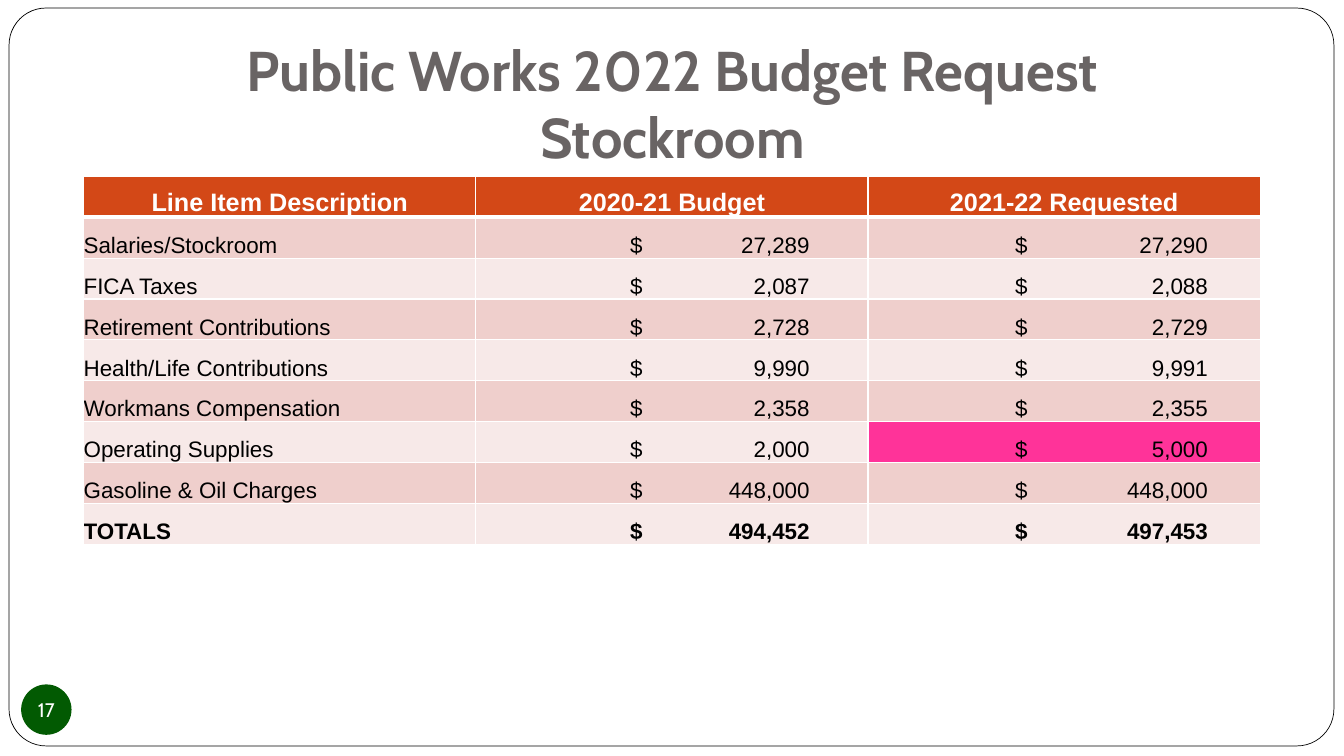
from lxml.etree import SubElement
from pptx import Presentation
from pptx.dml.color import RGBColor
from pptx.enum.shapes import MSO_SHAPE as SHAPE
from pptx.enum.text import MSO_ANCHOR as ANCHOR, PP_ALIGN as ALIGN
from pptx.oxml.ns import qn
from pptx.util import Inches, Pt

HEADERS = ["Line Item Description", "2020-21 Budget", "2021-22 Requested"]
ITEMS = [
    ("Salaries/Stockroom", "27,289", "27,290"),
    ("FICA Taxes", "2,087", "2,088"),
    ("Retirement Contributions", "2,728", "2,729"),
    ("Health/Life Contributions", "9,990", "9,991"),
    ("Workmans Compensation", "2,358", "2,355"),
    ("Operating Supplies", "2,000", "5,000"),
    ("Gasoline & Oil Charges", "448,000", "448,000"),
    ("TOTALS", "494,452", "497,453"),
]
# Tab stops of the dollar sign and of the right edge of the amount
AMOUNT_TABS = {1: (1.53, 3.31), 2: (1.46, 3.37)}
HIGHLIGHT = (6, 2)


def rgb(color):
    return RGBColor.from_string(color)


def write(tf, text, font="Arial", size=16, color="000000", bold=False,
          align=ALIGN.LEFT, anchor=ANCHOR.BOTTOM, insets=(0, 0, 0, 0), tabs=None):
    """Fill a text frame with one paragraph; a line feed becomes a line break."""
    tf.vertical_anchor = anchor
    tf.margin_left, tf.margin_top, tf.margin_right, tf.margin_bottom = map(Inches, insets)
    p = tf.paragraphs[0]
    p.alignment = align
    if tabs:
        tab_list = SubElement(p._p.get_or_add_pPr(), qn("a:tabLst"))
        for pos, side in zip(tabs, ("l", "r")):
            SubElement(tab_list, qn("a:tab"), pos=str(Inches(pos)), algn=side)
    for i, line in enumerate(text.split("\n")):
        if i:
            p.add_line_break()
        r = p.add_run()
        r.text = line
        r.font.name, r.font.size, r.font.bold = font, Pt(size), bold
        r.font.color.rgb = rgb(color)


class BudgetSlide:
    title_font = "Cabin"
    white, grey, green = "FFFFFF", "696464", "025A02"
    header_fill, highlight_fill = "D34817", "FF3399"
    bands = ("F7E9E8", "EFCFCC")

    def __init__(self, prs):
        self.s = prs.slides.add_slide(prs.slide_layouts[6])

    def shape(self, kind, x, y, w, h, fill, line=None):
        sp = self.s.shapes.add_shape(kind, Inches(x), Inches(y), Inches(w), Inches(h))
        sp.shadow.inherit = False
        sp.fill.solid()
        sp.fill.fore_color.rgb = rgb(fill)
        if line:
            sp.line.color.rgb = rgb(line)
            sp.line.width = Pt(0.5)
        else:
            sp.line.fill.background()
        return sp

    def frame(self):
        sp = self.shape(SHAPE.ROUNDED_RECTANGLE, 0.09, 0.08, 13.14, 7.32, self.white, "000000")
        sp.adjustments[0] = 0.05

    def title(self, text):
        box = self.s.shapes.add_textbox(Inches(2.17), Inches(0.3), Inches(9), Inches(1.25))
        box.text_frame.word_wrap = True
        write(box.text_frame, text, self.title_font, 40, self.grey, True, ALIGN.CENTER,
              ANCHOR.TOP, (0.1, 0.05, 0.1, 0.1))

    def page_number(self, number):
        sp = self.shape(SHAPE.OVAL, 0.21, 6.79, 0.5, 0.5, self.green)
        sp.text_frame.word_wrap = False
        write(sp.text_frame, number, self.title_font, 14, self.white,
              align=ALIGN.CENTER, anchor=ANCHOR.MIDDLE)

    def cell(self, cell, text, fill, top=1, bottom=1, **fmt):
        tf = cell.text_frame
        write(tf, text, **fmt)
        cell.vertical_anchor = fmt.get("anchor", ANCHOR.BOTTOM)
        insets = fmt.get("insets", (0, 0, 0, 0))
        (cell.margin_left, cell.margin_top,
         cell.margin_right, cell.margin_bottom) = map(Inches, insets)
        # Borders come before the fill in the cell properties
        tc_pr = cell._tc.get_or_add_tcPr()
        for side, width in (("L", 1), ("R", 1), ("T", top), ("B", bottom)):
            ln = SubElement(tc_pr, qn(f"a:ln{side}"), w=str(Pt(width)))
            SubElement(SubElement(ln, qn("a:solidFill")), qn("a:srgbClr"), val=self.white)
        cell.fill.solid()
        cell.fill.fore_color.rgb = rgb(fill)

    def table(self, headers, items):
        rows, cols = len(items) + 1, len(headers)
        table = self.s.shapes.add_table(rows, cols, Inches(0.83), Inches(1.75),
                                        Inches(11.67), Inches(3.65)).table
        # Header row
        for col, text in enumerate(headers):
            self.cell(table.cell(0, col), text, self.header_fill, bottom=3, size=18,
                      color=self.white, bold=True, align=ALIGN.CENTER,
                      insets=(0.01, 0.01, 0.01, 0))
        # Line items, with the totals in bold
        for row, item in enumerate(items, 1):
            for col, text in enumerate(item):
                fill = self.highlight_fill if (row, col) == HIGHLIGHT else self.bands[row % 2]
                self.cell(table.cell(row, col), f"\t$\t{text}" if col else text, fill,
                          top=3 if row == 1 else 1, bold=row == len(items),
                          tabs=AMOUNT_TABS.get(col))


def main():
    prs = Presentation()
    prs.slide_width, prs.slide_height = Inches(13.33), Inches(7.5)
    slide = BudgetSlide(prs)
    slide.frame()
    slide.title("Public Works 2022 Budget Request\nStockroom")
    slide.table(HEADERS, ITEMS)
    slide.page_number("17")
    prs.save("out.pptx")


if __name__ == "__main__":
    main()
